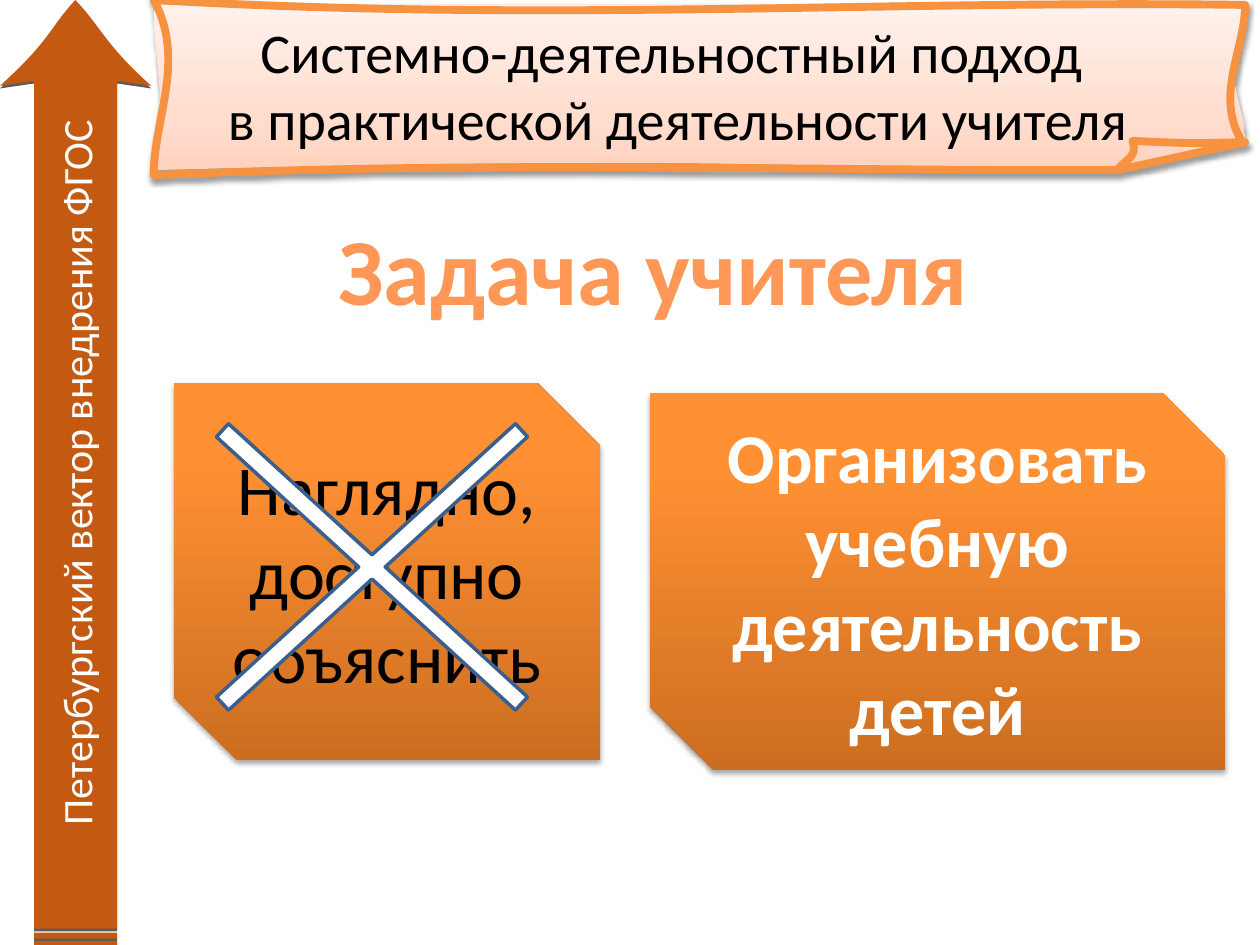
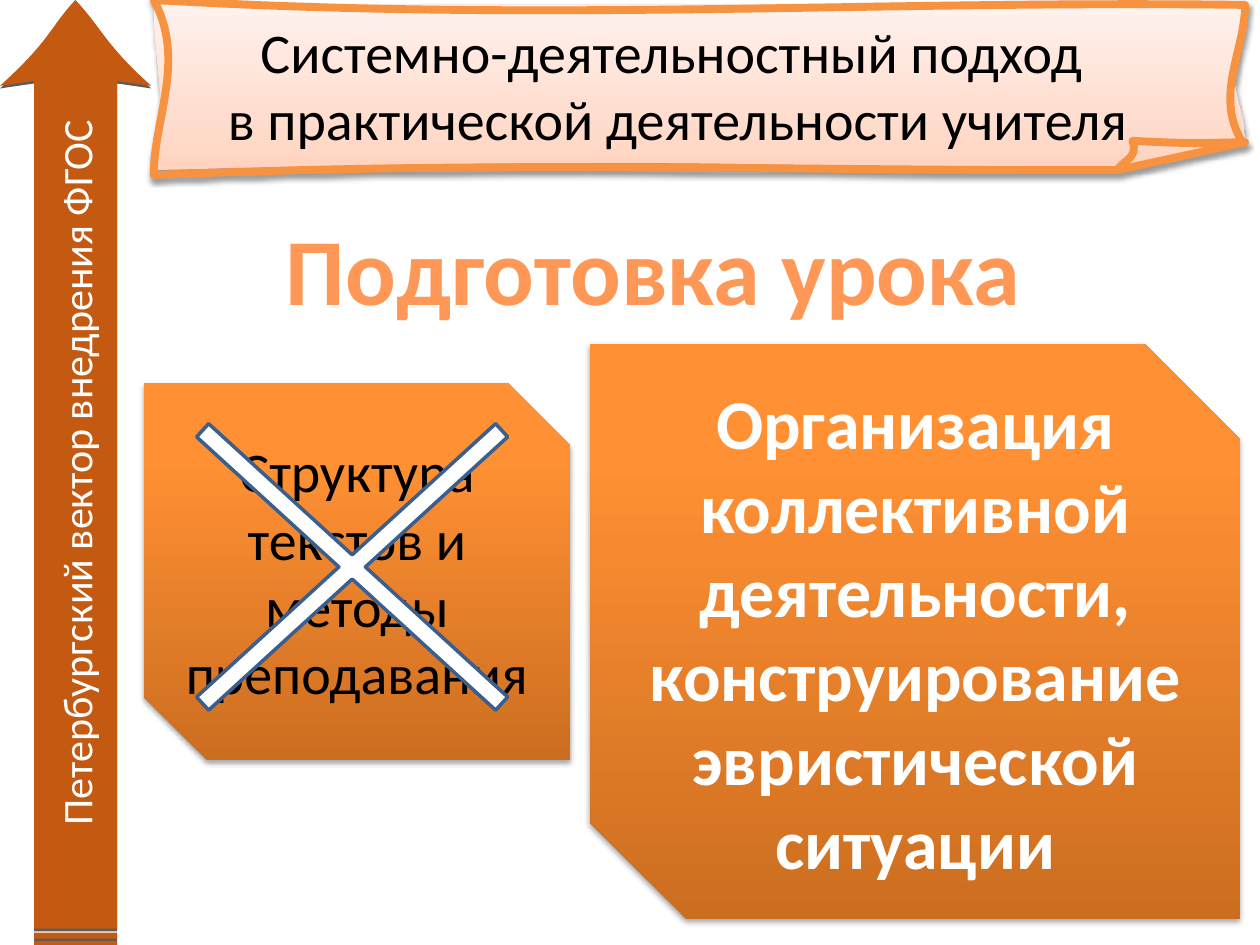
from lxml import etree
from pptx import Presentation
from pptx.dml.color import RGBColor
from pptx.enum.shapes import MSO_SHAPE
from pptx.enum.text import MSO_ANCHOR, PP_ALIGN
from pptx.oxml.ns import qn
from pptx.util import Cm, Pt

SNIPPED = MSO_SHAPE.SNIP_2_DIAG_RECTANGLE
CROSS = MSO_SHAPE.MATH_MULTIPLY
MIDDLE, TOP = MSO_ANCHOR.MIDDLE, MSO_ANCHOR.TOP
CENTER = PP_ALIGN.CENTER

FONT = "Calibri"
BLACK = RGBColor(0x00, 0x00, 0x00)
WHITE = RGBColor(0xFF, 0xFF, 0xFF)
ARROW_BROWN = RGBColor(0xC4, 0x59, 0x11)
SCROLL_EDGE = RGBColor(0xF6, 0x92, 0x40)
CROSS_EDGE = RGBColor(0x3A, 0x5F, 0x8C)

# Gradient stops: position in percent, colour
SCROLL_STOPS = [(0, RGBColor(0xFF, 0xD2, 0xBD)), (35, RGBColor(0xFF, 0xDE, 0xD0)),
                (100, RGBColor(0xFF, 0xF2, 0xED))]
BOX_STOPS = [(0, RGBColor(0xCC, 0x6E, 0x20)), (80, RGBColor(0xFF, 0x90, 0x34)),
             (100, RGBColor(0xFF, 0x91, 0x36))]
HEADING_STOPS = [(0, RGBColor(0x9D, 0x47, 0x00)), (78, RGBColor(0xFF, 0x98, 0x56)),
                 (100, RGBColor(0xFF, 0xF5, 0xF1))]

TITLE = ("Системно-деятельностный подход ", "в практической деятельности учителя")
ARROW_TEXT = "Петербургский вектор внедрения ФГОС"

# Outlines in cm: a step of one point is a line, a step of three is a curve
SHEET = [[(3.1, 0.1)], [(25.1, 0.1)],
         [(24.59, 1.9), (25.1, 1.96), (25.1, 2.87)],
         [(23.52, 3.07), (24.05, 3.23), (22.53, 3.43)],
         [(16.05, 3.43), (15.8, 3.1), (3.1, 3.43)],
         [(3.43, 2.29), (3.1, 1.22), (3.1, 0.1)]]
FOLD = [[(22.53, 3.43)], [(23.29, 2.84)], [(25.1, 2.87)], [(22.53, 3.43)]]
EDGE = [[(22.53, 3.43)],
        [(22.63, 3.23), (22.96, 3.2), (22.83, 2.84)],
        [(24.36, 2.92), (24.33, 2.87), (25.1, 2.87)], [(22.53, 3.43)],
        [(16.05, 3.45), (10.13, 3.23), (3.1, 3.53)],
        [(3.1, 2.39), (3.76, 1.22), (3.1, 0)],
        [(10.95, 0.46), (17.75, 0), (25.1, 0.1)],
        [(25.1, 1.04), (24.43, 1.98), (25.1, 2.95)]]
NO_LINE, NO_FILL = {"stroke": "0"}, {"fill": "none"}

# The arrow lies pointing right and is then turned upwards
ARROW_LENGTH, ARROW_WIDTH = 19.05, 3.05
SHAFT_TOP, SHAFT_BOTTOM = 0.69, 2.36
ARROW = [[(0.33, SHAFT_TOP)], [(17.42, SHAFT_TOP)], [(17.32, 0)],
         [(18.24, 1.02), (18.52, 1.02), (ARROW_LENGTH, 1.52)],
         [(18.52, 2.03), (18.16, 2.11), (17.32, ARROW_WIDTH)],
         [(17.42, SHAFT_BOTTOM)], [(0.33, SHAFT_BOTTOM)], [(0.33, SHAFT_TOP)]]
STRIPES = [(0, 0.08), (0.13, 0.25)]

SLIDES = [
    {"heading": {"text": "Задача учителя", "at": (6.5, 4.13, 13.34, 2.57)},
     "old": {"text": "Наглядно, доступно объяснить", "at": (3.5, 7.72, 8.6, 7.6),
             "size": 40},
     "cross_left": 1.7,
     "new": {"text": "Организовать учебную деятельность детей",
             "at": (13.1, 7.92, 11.6, 7.6)}},
    {"heading": {"text": "Подготовка урока", "at": (5.47, 4.13, 15.39, 2.57)},
     "old": {"text": "Структура текстов и методы преподавания",
             "at": (2.9, 7.72, 8.6, 7.6), "size": 32, "inset": 0.1},
     "cross_left": 1.3,
     "new": {"text": "Организация коллективной деятельности, "
                     "конструирование эвристической ситуации",
             "at": (11.9, 6.93, 13.1, 11.6), "inset": 0}},
]


def box_cm(at):
    return [Cm(v) for v in at]


def set_gradient(fill, element, stops, angle):
    """Fill with any number of stops; angle runs counter-clockwise."""
    fill.gradient()
    fill.gradient_angle = angle
    stop_list = next(element.iter(qn("a:gsLst")))
    for stop in list(stop_list):
        stop_list.remove(stop)
    for position, color in stops:
        stop = etree.SubElement(stop_list, qn("a:gs"), pos=str(position * 1000))
        etree.SubElement(stop, qn("a:srgbClr"), val=str(color))


def set_solid(fill, color):
    fill.solid()
    fill.fore_color.rgb = color


def set_line(sp, color=None, width=0):
    if color is None:
        sp.line.fill.background()
    else:
        sp.line.color.rgb = color
        sp.line.width = Pt(width)


def set_shadow(sp, alpha=None, blur=0, distance=0):
    """Remove the theme shadow and, given an alpha, cast one straight down."""
    sp.shadow.inherit = False
    if alpha is None:
        return
    effects = sp._element.spPr.find(qn("a:effectLst"))
    outer = etree.SubElement(effects, qn("a:outerShdw"), blurRad=str(Pt(blur)),
                             dist=str(Pt(distance)), dir="5400000", rotWithShape="0")
    color = etree.SubElement(outer, qn("a:srgbClr"), val=str(BLACK))
    etree.SubElement(color, qn("a:alpha"), val=str(alpha * 1000))


def write_text(sp, lines, size, color=None, bold=False, inset=None,
               anchor=MIDDLE, wrap=True):
    tf = sp.text_frame
    frame_format = {"word_wrap": wrap, "vertical_anchor": anchor}
    if inset is not None:
        frame_format.update(margin_left=Cm(inset), margin_right=Cm(inset))
    for name, value in frame_format.items():
        setattr(tf, name, value)
    p = tf.paragraphs[0]
    p.alignment = CENTER
    for i, line in enumerate(lines):
        if i:
            p.add_line_break()
        r = p.add_run()
        r.text = line
        for name, value in {"name": FONT, "size": Pt(size), "bold": bold}.items():
            setattr(r.font, name, value)
        if color is not None:
            r.font.color.rgb = color
    return p


def add_outline(slide, contours, layers=None):
    """Draw contours of lines and curves; layers give each one its own path."""
    builder = None
    for steps in contours:
        points = [(Cm(x), Cm(y)) for step in steps for x, y in step]
        if builder is None:
            builder = slide.shapes.build_freeform(*points[0])
        else:
            builder.move_to(*points[0])
        builder.add_line_segments(points[1:], close=False)
    sp = builder.convert_to_shape()

    drawn = next(sp._element.iter(qn("a:path")))
    path_list = drawn.getparent()
    nodes = iter(list(drawn))
    size = {"w": drawn.get("w"), "h": drawn.get("h")}
    path_list.remove(drawn)
    path = None
    for steps, layer in zip(contours, layers or [{}] * len(contours)):
        if path is None or layers:
            path = etree.SubElement(path_list, qn("a:path"), **size, **layer)
        for step in steps:
            step_nodes = [next(nodes) for _ in step]
            if len(step) == 1:
                path.append(step_nodes[0])
            else:
                curve = etree.SubElement(path, qn("a:cubicBezTo"))
                curve.extend([node[0] for node in step_nodes])
        if layer != NO_FILL:
            etree.SubElement(path, qn("a:close"))
    return sp


def add_title_scroll(slide):
    scroll = add_outline(slide, [SHEET, FOLD, EDGE], [NO_LINE, NO_LINE, NO_FILL])
    set_gradient(scroll.fill, scroll._element, SCROLL_STOPS, 90)
    set_line(scroll, SCROLL_EDGE, 4.5)
    set_shadow(scroll, 38, 3.1, 1.6)
    title = slide.shapes.add_textbox(*box_cm((2.24, 0.11, 22.86, 3.18)))
    write_text(title, TITLE, 32, BLACK)


def add_vector_arrow(slide):
    stripes = [[[(left, SHAFT_TOP)], [(left, SHAFT_BOTTOM)], [(right, SHAFT_BOTTOM)],
                [(right, SHAFT_TOP)], [(left, SHAFT_TOP)]]
               for left, right in STRIPES]
    sp = add_outline(slide, [*stripes, ARROW])
    shift = (ARROW_LENGTH - ARROW_WIDTH) / 2
    sp.left, sp.top, sp.rotation = Cm(-shift), Cm(shift), 270
    set_solid(sp.fill, ARROW_BROWN)
    set_line(sp)
    set_shadow(sp, 63, 0, 1.5)
    write_text(sp, [ARROW_TEXT], 24, WHITE)


def add_heading(slide, text, at):
    sp = slide.shapes.add_textbox(*box_cm(at))
    p = write_text(sp, [text], 54, bold=True, anchor=TOP, wrap=False)
    r = p.runs[0]
    set_gradient(r.font.fill, r._r, HEADING_STOPS, 270)


def add_snipped_box(slide, text, at, size=40, color=WHITE, bold=True, inset=None):
    sp = slide.shapes.add_shape(SNIPPED, *box_cm(at))
    set_gradient(sp.fill, sp._element, BOX_STOPS, 90)
    set_line(sp)
    set_shadow(sp, 35, 3.1, 1.8)
    write_text(sp, [text], size, color, bold, inset)


def add_cross(slide, left):
    sp = slide.shapes.add_shape(CROSS, *box_cm((left, 6.13, 11.6, 10.6)))
    sp.adjustments[0] = 0.034
    set_solid(sp.fill, WHITE)
    set_line(sp, CROSS_EDGE, 2)
    set_shadow(sp)


def main():
    prs = Presentation()
    prs.slide_width, prs.slide_height = Cm(25.4), Cm(19.05)
    for content in SLIDES:
        slide = prs.slides.add_slide(prs.slide_layouts[6])
        add_title_scroll(slide)
        add_vector_arrow(slide)
        add_heading(slide, **content["heading"])
        add_snipped_box(slide, color=BLACK, bold=False, **content["old"])
        add_cross(slide, content["cross_left"])
        add_snipped_box(slide, **content["new"])
    prs.save("out.pptx")


if __name__ == "__main__":
    main()
